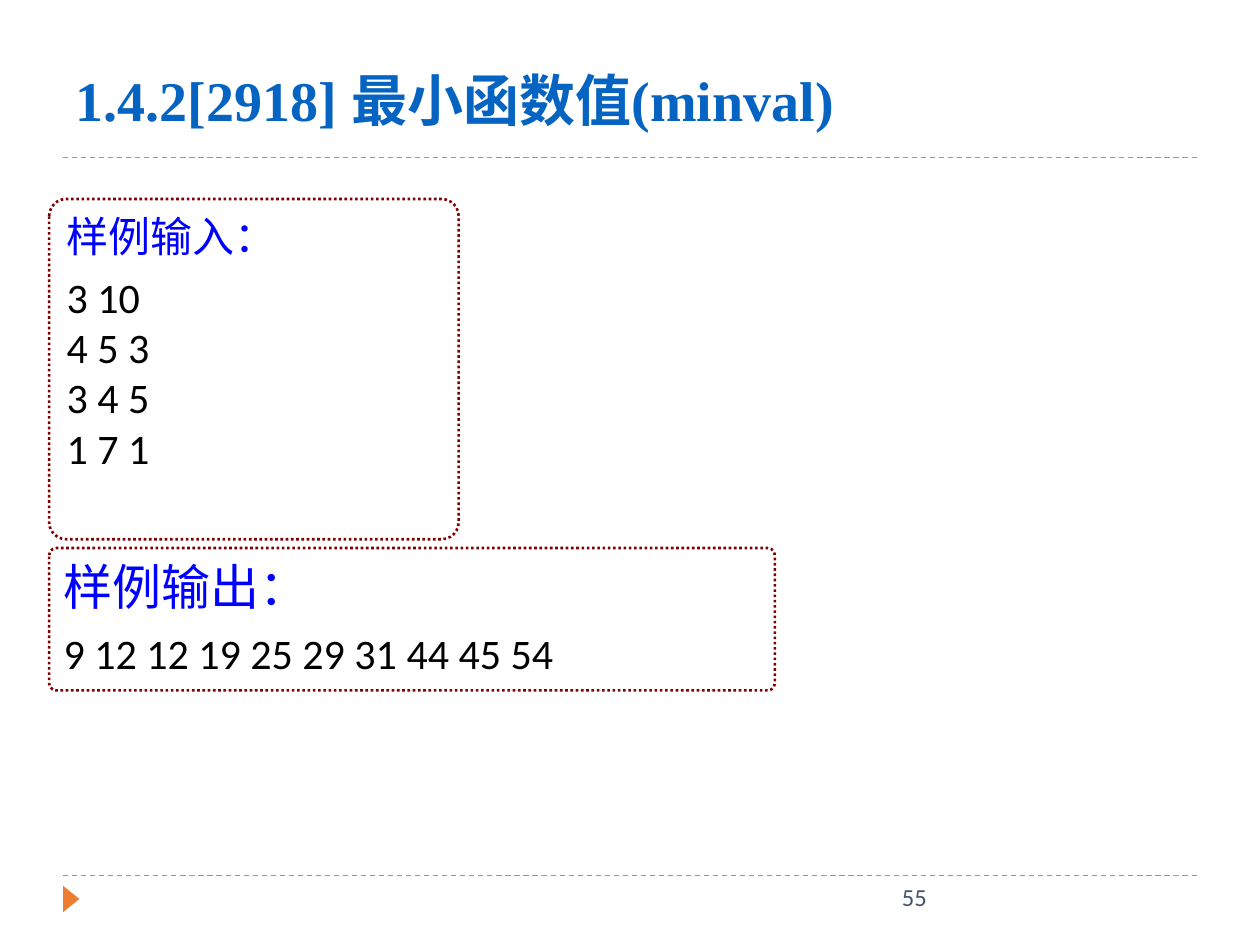
from dataclasses import dataclass

from lxml import etree
from pptx import Presentation
from pptx import util as u
from pptx.dml.color import RGBColor
from pptx.enum import dml, shapes, text
from pptx.oxml.ns import qn

WIDTH, HEIGHT = 10, 7.5
MARGIN = 0.05 * WIDTH
BOX_LEFT = 0.39
COLORS = {
    "accent": "ED7D31",
    "border": "800000",
    "heading": "0000FF",
    "body": "000000",
    "paper": "FFFFFF",
    "title": "0563C1",
    "number": "44546A",
}


@dataclass
class Sample:
    heading: str
    heading_size: int
    lines: list[str]
    top: float
    width: float
    height: float


SAMPLES = [
    Sample("样例输出：", 28, ["9 12 12 19 25 29 31 44 45 54"], 4.35, 5.76, 1.13),
    Sample("样例输入：", 24, ["3 10", "4 5 3", "3 4 5", "1 7 1"], 1.58, 3.25, 2.7),
]


def color(name: str) -> RGBColor:
    return RGBColor.from_string(COLORS[name])


def place(shape, left: float, top: float, width: float, height: float) -> None:
    shape.left, shape.top = u.Inches(left), u.Inches(top)
    shape.width, shape.height = u.Inches(width), u.Inches(height)


def style(para, font: str, size: int, name: str, bold: bool = False) -> None:
    para.alignment = text.PP_ALIGN.LEFT
    for span in para.runs:
        span.font.name = font
        span.font.size = u.Pt(size)
        span.font.bold = bold
        span.font.color.rgb = color(name)


def prepare(frame) -> None:
    frame.word_wrap = True
    frame.auto_size = text.MSO_AUTO_SIZE.NONE
    frame.vertical_anchor = text.MSO_ANCHOR.TOP


def draw_rule(page, top: float) -> None:
    rule = page.shapes.add_connector(
        shapes.MSO_CONNECTOR.STRAIGHT,
        u.Inches(MARGIN), u.Inches(top), u.Inches(WIDTH - MARGIN), u.Inches(top),
    )
    rule.line.color.rgb = color("accent")
    rule.line.width = u.Pt(0.75)
    rule.line.dash_style = dml.MSO_LINE.DASH
    etree.SubElement(rule._element.spPr, qn("a:effectLst"))


def draw_marker(page) -> None:
    marker = page.shapes.add_shape(shapes.MSO_SHAPE.ISOSCELES_TRIANGLE, 0, 0, 0, 0)
    place(marker, 0.46, 7.07, 0.21, 0.13)
    marker.rotation = 90
    marker.shadow.inherit = False
    marker.fill.solid()
    marker.fill.fore_color.rgb = color("accent")
    marker.line.fill.background()


def draw_sample(page, sample: Sample) -> None:
    box = page.shapes.add_shape(shapes.MSO_SHAPE.ROUNDED_RECTANGLE, 0, 0, 0, 0)
    place(box, BOX_LEFT, sample.top, sample.width, sample.height)
    box.adjustments[0] = 0.05
    box.shadow.inherit = False
    box.fill.solid()
    box.fill.fore_color.rgb = color("paper")
    box.line.color.rgb = color("border")
    box.line.width = u.Pt(1.5)
    box.line.dash_style = dml.MSO_LINE.ROUND_DOT
    frame = box.text_frame
    prepare(frame)
    frame.text = "\n".join([sample.heading, *sample.lines])
    heading, *body = frame.paragraphs
    style(heading, "Arial", sample.heading_size, "heading")
    heading.space_after = u.Pt(sample.heading_size / 4)
    for para in body:
        style(para, "Calibri", 24, "body")


def set_title(page) -> None:
    title = page.shapes.title
    place(title, BOX_LEFT, 0.47, 8.37, 0.64)
    frame = title.text_frame
    prepare(frame)
    frame.margin_left = u.Inches(0.21)
    frame.text = "1.4.2[2918] 最小函数值(minval)"
    style(frame.paragraphs[0], "Times New Roman", 32, "title", bold=True)


def draw_number(page) -> None:
    box = page.shapes.add_textbox(0, 0, 0, 0)
    place(box, 7.06, 6.95, 2.25, 0.4)
    prepare(box.text_frame)
    box.text_frame.text = "55"
    style(box.text_frame.paragraphs[0], "Calibri", 14, "number")


def main() -> None:
    deck = Presentation()
    deck.slide_width, deck.slide_height = u.Inches(WIDTH), u.Inches(HEIGHT)
    page = deck.slides.add_slide(deck.slide_layouts.get_by_name("Title Only"))
    for top in (6.95, 1.25):
        draw_rule(page, top)
    draw_marker(page)
    for sample in SAMPLES:
        draw_sample(page, sample)
    set_title(page)
    draw_number(page)
    deck.save("out.pptx")


if __name__ == "__main__":
    main()
